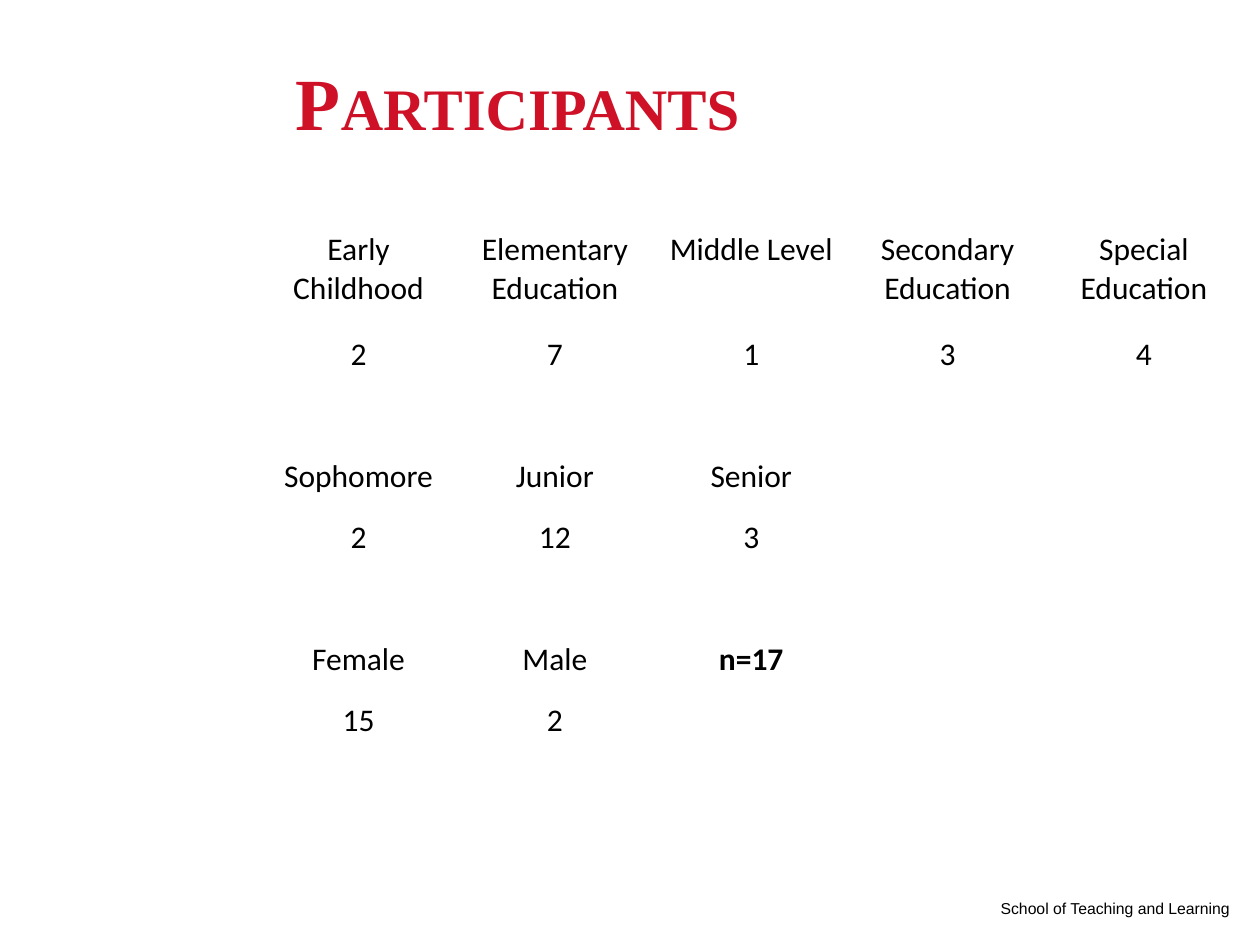
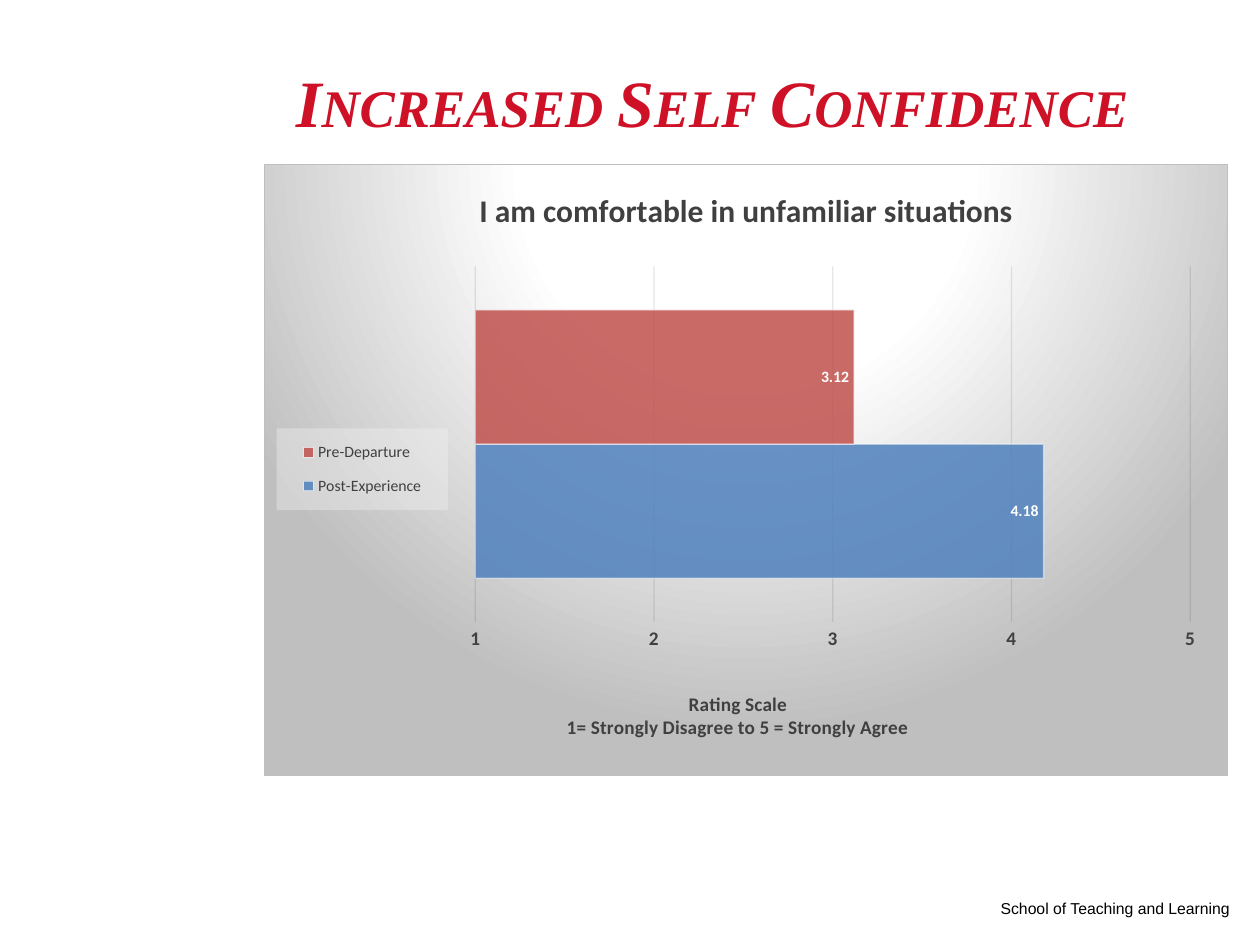
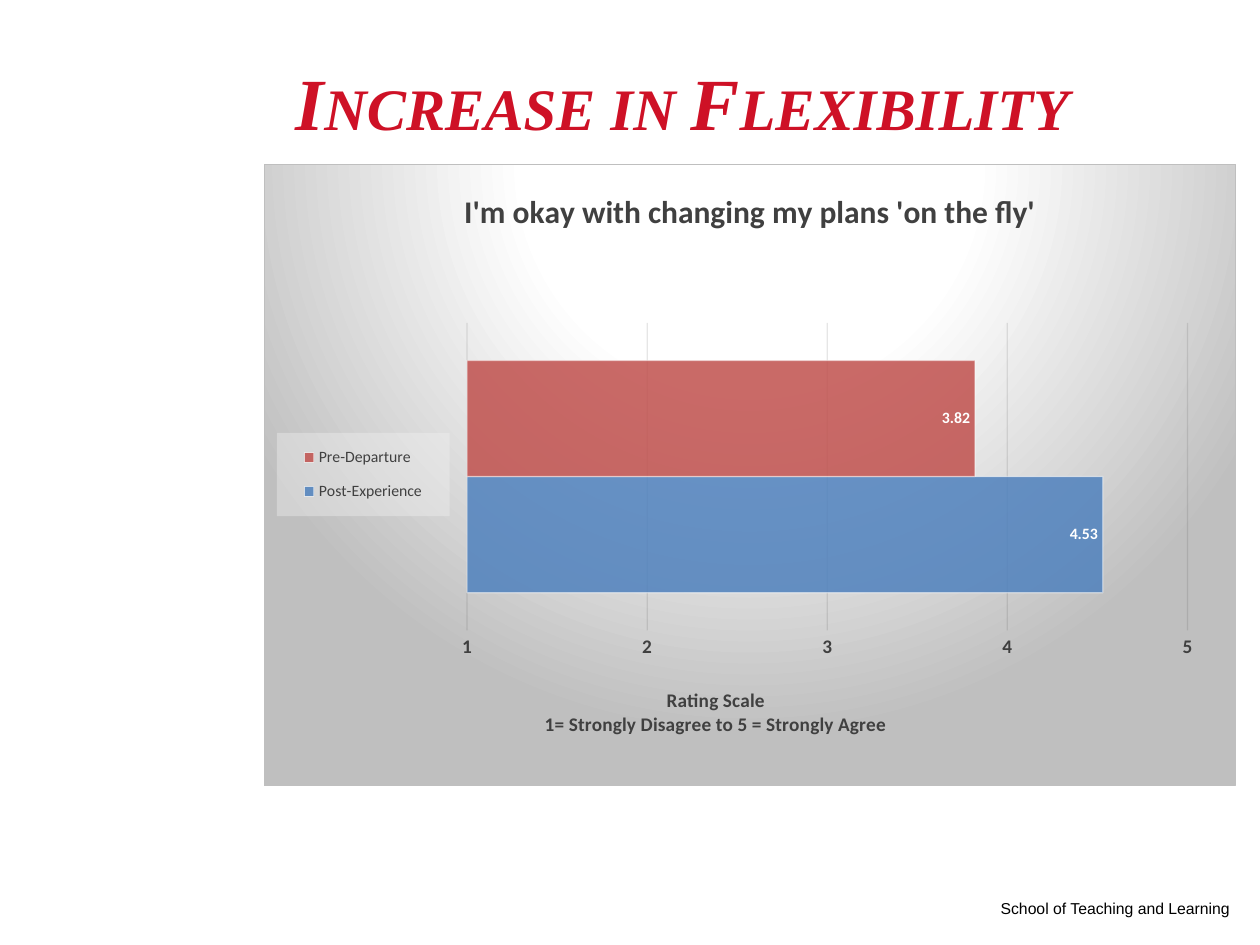
"""Build three slides on study participants and their survey ratings."""
from lxml import etree
from pptx import Presentation
from pptx import util as u
from pptx.chart.data import CategoryChartData
from pptx.dml.color import RGBColor
from pptx.enum import chart as charts, text
from pptx.oxml import ns, parse_xml

PX = 7620
COLORS = {"title": "CE1126", "black": "000000", "white": "FFFFFF", "dark": "404040",
          "grid": "0D0D0D", "gray": "BFBFBF", "legend": "F2F2F2",
          "Post-Experience": "4F81BD", "Pre-Departure": "C0504D"}
RGB = {name: RGBColor.from_string(value) for name, value in COLORS.items()}
NAMESPACES = ns.nsdecls("a", "c")


def style(font, name, size, color, bold=False, italic=False):
    font.name, font.size, font.bold, font.italic = name, u.Pt(size), bold, italic
    font.color.rgb = RGB[color]


def place(parent, index, inner=False, **fractions):
    for layout in parent.findall(ns.qn("c:layout")):
        parent.remove(layout)
    layout = etree.Element(ns.qn("c:layout"))
    manual = etree.SubElement(layout, ns.qn("c:manualLayout"))
    settings = {"layoutTarget": "inner"} if inner else {}
    settings |= {"xMode": "edge", "yMode": "edge", **fractions}
    for name, value in settings.items():
        etree.SubElement(manual, ns.qn(f"c:{name}")).set("val", str(value))
    parent.insert(index, layout)


presentation = Presentation()
presentation.slide_width, presentation.slide_height = 1200 * PX, 900 * PX

slides = []
for title, size, italic in [("Participants", 42, False),
                            ("Increased Self Confidence", 37.8, True),
                            ("Increase in Flexibility", 42, True)]:
    slide = presentation.slides.add_slide(presentation.slide_layouts[6])
    slides.append(slide)

    footer = slide.shapes.add_textbox(715 * PX, 850 * PX, 468 * PX, 30 * PX).text_frame
    footer.word_wrap = True
    footer.text = "School of Teaching and Learning"
    footer.paragraphs[0].alignment = text.PP_ALIGN.RIGHT
    style(footer.paragraphs[0].runs[0].font, "Arial", 9, "black")

    heading = slide.shapes.add_textbox(270 * PX, 36 * PX, 870 * PX, 120 * PX).text_frame
    heading.word_wrap = True
    heading.vertical_anchor = text.MSO_ANCHOR.MIDDLE
    heading.text = title
    run = heading.paragraphs[0].runs[0]
    style(run.font, "Times New Roman", size, "title", True, italic)
    run._r.get_or_add_rPr().set("cap", "small")

participant_rows = [
    [],
    ["Early Childhood", "Elementary\nEducation", "Middle Level",
     "Secondary Education", "Special Education"],
    ["2", "7", "1", "3", "4"],
    [],
    ["Sophomore", "Junior", "Senior"],
    ["2", "12", "3"],
    [],
    ["Female", "Male", "n=17"],
    ["15", "2"],
]
table = slides[0].shapes.add_table(9, 5, 248 * PX, 156 * PX, 935 * PX, 564 * PX).table
table.first_row = table.horz_banding = False
for column in table.columns:
    column.width = 187 * PX
for row_index, row in enumerate(table.rows):
    row.height = (100 if row_index == 1 else 58) * PX
    for cell in row.cells:
        cell.fill.background()
    for cell, value in zip(row.cells, participant_rows[row_index]):
        cell.text = value
        for paragraph in cell.text_frame.paragraphs:
            paragraph.alignment = text.PP_ALIGN.CENTER
            style(paragraph.runs[0].font, "Calibri", 18, "black", value == "n=17")
for spacer in (3, 6):
    table.cell(spacer, 0).merge(table.cell(spacer, 4))

ratings = [
    (slides[1], "I am comfortable in unfamiliar situations", (919, 583), (4.18, 3.12),
     dict(x=0.219, y=0.167, w=0.742, h=0.582), dict(x=0.31, y=0.855)),
    (slides[2], "I'm okay with changing my plans 'on the fly'", (926, 593), (4.53, 3.82),
     dict(x=0.209, y=0.255, w=0.742, h=0.495), dict(x=0.285, y=0.835)),
]
for slide, question, (width, height), scores, plot_place, scale_place in ratings:
    data = CategoryChartData()
    data.categories = ["1"]
    for name, score in zip(("Post-Experience", "Pre-Departure"), scores):
        data.add_series(name, [score])
    chart = slide.shapes.add_chart(charts.XL_CHART_TYPE.BAR_CLUSTERED, 251 * PX, 156 * PX,
                                   width * PX, height * PX, data).chart
    style(chart.font, "Calibri", 10, "black")
    chart.chart_title.text_frame.text = question
    style(chart.chart_title.text_frame.paragraphs[0].runs[0].font, "Calibri", 18, "dark", True)
    chart.category_axis.visible = False

    axis = chart.value_axis
    axis.minimum_scale, axis.maximum_scale, axis.major_unit = 1, 5, 1
    axis.major_tick_mark = axis.minor_tick_mark = charts.XL_TICK_MARK.NONE
    axis.tick_labels.number_format = "General"
    axis.tick_labels.number_format_is_linked = False
    style(axis.tick_labels.font, "Calibri", 11, "dark", True)
    axis.format.line.fill.background()
    axis.major_gridlines.format.line.color.rgb = RGB["grid"]
    axis.major_gridlines.format.line.width = u.Pt(0.75)
    axis.axis_title.text_frame.text = "Rating Scale\n1= Strongly Disagree to 5 = Strongly Agree"
    for paragraph in axis.axis_title.text_frame.paragraphs:
        style(paragraph.runs[0].font, "Calibri", 11, "dark", True)

    plot = chart.plots[0]
    plot.gap_width, plot.overlap, plot.vary_by_categories = 65, 0, False
    for series in plot.series:
        series.format.fill.solid()
        series.format.fill.fore_color.rgb = RGB[series.name]
        series.format.line.color.rgb = RGB["white"]
        series.format.line.width = u.Pt(0.75)
        labels = series.data_labels
        labels.show_value = True
        labels.position = charts.XL_LABEL_POSITION.INSIDE_END
        style(labels.font, "Calibri", 9, "white", True)

    chart.has_legend = True
    chart.legend.position = charts.XL_LEGEND_POSITION.RIGHT
    chart.legend.include_in_layout = False
    style(chart.legend.font, "Calibri", 9, "dark")

    root = chart.element
    legend = root.xpath("c:chart/c:legend")[0]
    place(root.xpath("c:chart/c:plotArea")[0], 0, True, **plot_place)
    place(root.xpath(".//c:valAx/c:title")[0], 1, **scale_place)
    place(legend, 1, x=0.013, y=0.432, w=0.178, h=0.134)
    legend.find(ns.qn("c:overlay")).addnext(parse_xml(
        f'<c:spPr {NAMESPACES}><a:solidFill><a:srgbClr val="{COLORS["legend"]}">'
        '<a:alpha val="39000"/></a:srgbClr></a:solidFill></c:spPr>'))
    for query, opacities in (("c:ser/c:spPr", (85, 50)), ("c:majorGridlines", (10,))):
        for element in root.xpath(f".//{query}"):
            for color, opacity in zip(element.iter(ns.qn("a:srgbClr")), opacities):
                etree.SubElement(color, ns.qn("a:alpha")).set("val", str(opacity * 1000))

    stops = "".join(f'<a:gs pos="{position * 1000}"><a:srgbClr val="{COLORS[name]}"/></a:gs>'
                    for position, name in ((0, "white"), (39, "white"), (100, "gray")))
    root.find(ns.qn("c:chart")).addnext(parse_xml(
        f'<c:spPr {NAMESPACES}><a:gradFill><a:gsLst>{stops}</a:gsLst><a:path path="circle">'
        '<a:fillToRect l="50000" t="-80000" r="50000" b="180000"/></a:path></a:gradFill>'
        f'<a:ln w="{u.Pt(0.75)}"><a:solidFill><a:srgbClr val="{COLORS["gray"]}"/>'
        '</a:solidFill></a:ln></c:spPr>'))

presentation.save("out.pptx")
